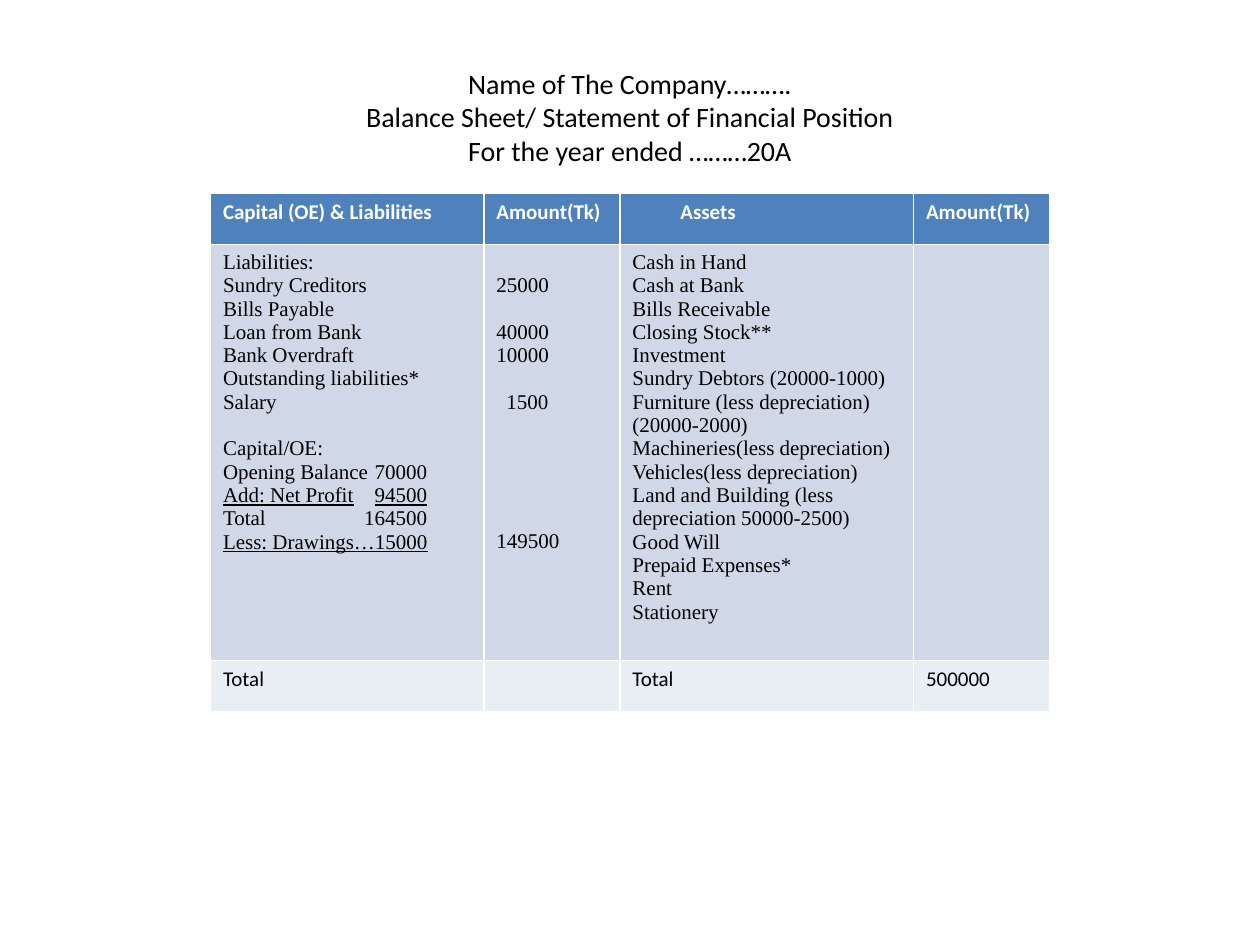
from lxml import etree
from pptx import Presentation
from pptx.dml.color import RGBColor
from pptx.enum.text import MSO_ANCHOR, PP_ALIGN
from pptx.oxml.ns import qn
from pptx.util import Inches, Pt

CENTER, LEFT = PP_ALIGN.CENTER, PP_ALIGN.LEFT
MIDDLE = MSO_ANCHOR.MIDDLE
SANS, SERIF = "Calibri", "Times New Roman"
BLACK, WHITE = "000000", "FFFFFF"
HEADER_FILL, BODY_FILL, TOTAL_FILL = "4F81BD", "D0D8E8", "E9EDF4"
LINE = 13.3  # height in points of one 12-point serif line
FIGURE_TAB = 1.62  # right edge of the capital figures, in inches

TITLE = [
    "Name of The Company……….",
    "Balance Sheet/ Statement of Financial Position",
    "For the year ended ………20A",
]
COLUMN_WIDTHS = [2.17, 1.08, 2.33, 1.08]
ROW_HEIGHTS = [0.41, 3.24, 0.41]
HEADINGS = ["Capital (OE) & Liabilities", "Amount(Tk)", "Assets", "Amount(Tk)"]
TOTALS = ["Total", "", "Total", "500000"]
LIABILITIES = [
    "Liabilities:", "Sundry Creditors", "Bills Payable", "Loan from Bank",
    "Bank Overdraft", "Outstanding liabilities* Salary",
]
# Text and format of each line of the capital account
CAPITAL = [
    ("Capital/OE:", {"lines_before": 1}),
    ("Opening Balance\t70000", {}),
    ("Add: Net Profit\t94500", {"underline": True}),
    ("Total\t164500", {}),
    ("Less: Drawings…15000", {"underline": True}),
]
# Amount, empty lines above it, left indent in inches
AMOUNTS = [("25000", 0, 0), ("40000", 1, 0), ("10000", 0, 0),
           ("1500", 1, 0.08), ("149500", 5, 0)]
ASSETS = [
    "Cash in Hand", "Cash at Bank", "Bills Receivable", "Closing Stock**",
    "Investment", "Sundry Debtors (20000-1000)",
    "Furniture (less depreciation) (20000-2000)",
    "Machineries(less depreciation)", "Vehicles(less depreciation)",
    "Land and Building (less depreciation 50000-2500)", "Good Will",
    "Prepaid Expenses*", "Rent", "Stationery",
]


def color(value):
    return RGBColor.from_string(value)


def add_text(frame, text, font=SANS, size=12, fill=BLACK, bold=False,
             underline=False, align=LEFT, lines_before=0, indent=0):
    """Write one paragraph, using the frame's first one while it is empty."""
    first = frame.paragraphs[0]
    paragraph = frame.add_paragraph() if first.runs else first
    paragraph.alignment = align
    if lines_before:
        paragraph.space_before = Pt(lines_before * LINE)
    properties = paragraph._p.get_or_add_pPr()
    if indent:
        properties.set("marL", str(Inches(indent)))
    if "\t" in text:
        tabs = etree.SubElement(properties, qn("a:tabLst"))
        etree.SubElement(tabs, qn("a:tab"), pos=str(Inches(FIGURE_TAB)), algn="r")
    run = paragraph.add_run()
    run.text = text
    run.font.name, run.font.size = font, Pt(size)
    run.font.bold, run.font.underline = bold, underline
    run.font.color.rgb = color(fill)


def add_title(slide, left, top, width, height):
    box = slide.shapes.add_textbox(Inches(left), Inches(top), Inches(width), Inches(height))
    frame = box.text_frame
    frame.word_wrap = True
    frame.vertical_anchor = MIDDLE
    for line in TITLE:
        add_text(frame, line, size=16, align=CENTER)


def fill_header(cells):
    for heading, cell in zip(HEADINGS, cells):
        indent = 0.38 if heading == "Assets" else 0
        add_text(cell.text_frame, heading, fill=WHITE, bold=True, indent=indent)


def fill_body(cells):
    liabilities, amounts, assets, _ = cells
    for line in LIABILITIES:
        add_text(liabilities.text_frame, line, font=SERIF)
    for line, style in CAPITAL:
        add_text(liabilities.text_frame, line, font=SERIF, **style)
    amounts.margin_top = Inches(0.05) + Pt(LINE)
    for amount, lines_before, indent in AMOUNTS:
        add_text(amounts.text_frame, amount, font=SERIF,
                 lines_before=lines_before, indent=indent)
    for line in ASSETS:
        add_text(assets.text_frame, line, font=SERIF)


def fill_totals(cells):
    for total, cell in zip(TOTALS, cells):
        if total:
            add_text(cell.text_frame, total)


def add_balance_sheet(slide, left, top):
    table = slide.shapes.add_table(
        len(ROW_HEIGHTS), len(COLUMN_WIDTHS), Inches(left), Inches(top),
        Inches(sum(COLUMN_WIDTHS)), Inches(sum(ROW_HEIGHTS))).table
    for column, width in zip(table.columns, COLUMN_WIDTHS):
        column.width = Inches(width)
    fills = [HEADER_FILL, BODY_FILL, TOTAL_FILL]
    writers = [fill_header, fill_body, fill_totals]
    for row, height, fill, write in zip(table.rows, ROW_HEIGHTS, fills, writers):
        row.height = Inches(height)
        for cell in row.cells:
            cell.fill.solid()
            cell.fill.fore_color.rgb = color(fill)
        write(list(row.cells))


def main():
    presentation = Presentation()
    presentation.slide_width, presentation.slide_height = Inches(10), Inches(7.5)
    slide = presentation.slides.add_slide(presentation.slide_layouts[6])
    add_title(slide, 0.5, 0.3, 9, 1.25)
    add_balance_sheet(slide, 1.67, 1.53)
    presentation.save("out.pptx")


if __name__ == "__main__":
    main()
